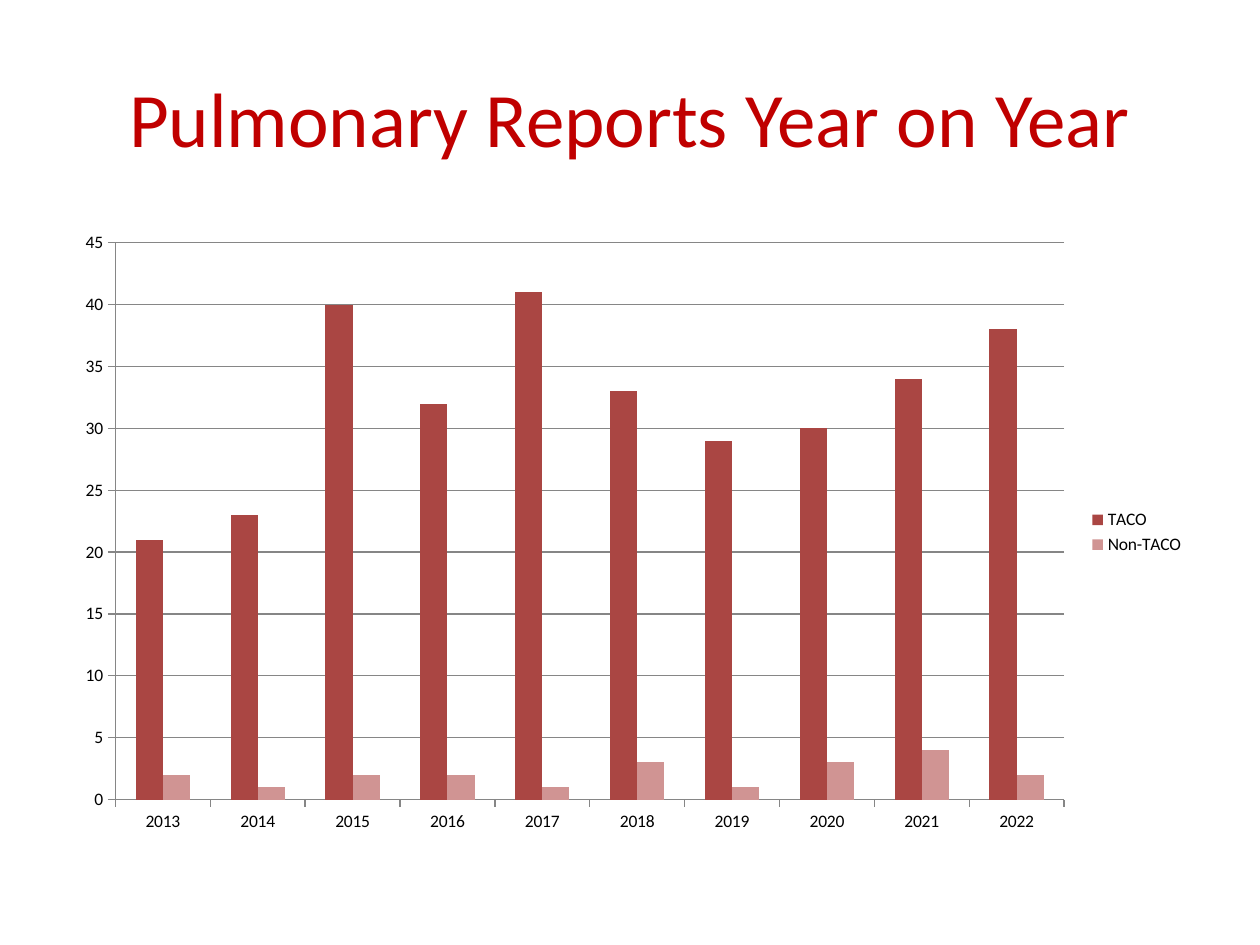
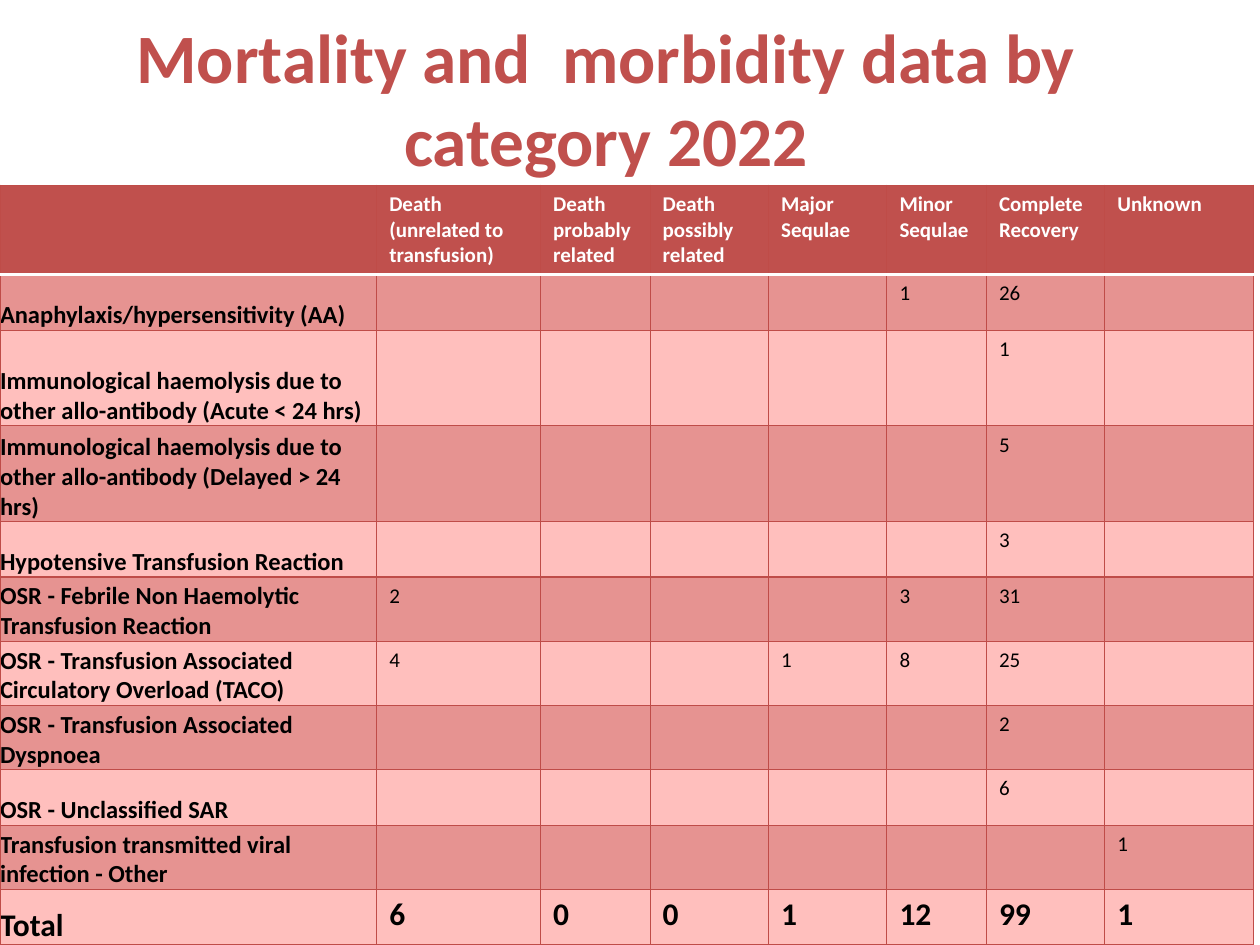
from lxml import etree
from pptx import Presentation
from pptx.chart.data import CategoryChartData
from pptx.dml.color import RGBColor
from pptx.enum.chart import XL_CHART_TYPE as ChartType, XL_LEGEND_POSITION as LegendPos, XL_TICK_MARK as Tick
from pptx.enum.text import MSO_ANCHOR as Anchor, MSO_AUTO_SIZE as AutoSize, PP_ALIGN as Align
from pptx.oxml.ns import qn
from pptx.util import Inches, Pt

FONT = "Calibri"
COLORS = {
    "title": "C00000", "accent": "C0504D", "border": "BF4C48",
    "dark_row": "E69391", "light_row": "FFBFBD",
    "taco": "AA4643", "non_taco": "D09493", "grid": "868686",
    "black": "000000", "white": "FFFFFF",
}

YEARS = [str(year) for year in range(2013, 2023)]
REPORTS = [
    ("TACO", "taco", [21, 23, 40, 32, 41, 33, 29, 30, 34, 38]),
    ("Non-TACO", "non_taco", [2, 1, 2, 2, 1, 3, 1, 3, 4, 2]),
]

# Heading and column width in inches
OUTCOMES = [
    ("", 2.99),
    ("Death (unrelated to transfusion)", 1.3),
    ("Death probably related", 0.87),
    ("Death possibly related", 0.94),
    ("Major Sequlae", 0.94),
    ("Minor Sequlae", 0.79),
    ("Complete Recovery", 0.94),
    ("Unknown", 1.18),
]
HEADER_HEIGHT = 0.71
# Category, row height in inches, cases by outcome column
CATEGORIES = [
    ("Anaphylaxis/hypersensitivity (AA)", 0.44, {5: 1, 6: 26}),
    ("Immunological haemolysis due to other allo-antibody (Acute < 24 hrs)", 0.76, {6: 1}),
    ("Immunological haemolysis due to other allo-antibody (Delayed > 24 hrs)", 0.76, {6: 5}),
    ("Hypotensive Transfusion Reaction", 0.44, {6: 3}),
    ("OSR - Febrile Non Haemolytic Transfusion Reaction", 0.51, {1: 2, 5: 3, 6: 31}),
    ("OSR - Transfusion Associated Circulatory Overload (TACO)", 0.51, {1: 4, 4: 1, 5: 8, 6: 25}),
    ("OSR - Transfusion Associated Dyspnoea", 0.51, {6: 2}),
    ("OSR - Unclassified SAR", 0.44, {6: 6}),
    ("Transfusion transmitted viral infection - Other", 0.51, {7: 1}),
    ("Total", 0.44, {1: 6, 2: 0, 3: 0, 4: 1, 5: 12, 6: 99, 7: 1}),
]


def rgb(name):
    return RGBColor.from_string(COLORS[name])


def write(tf, text, size=12, color="black", bold=False, align=None):
    p = tf.paragraphs[0]
    p.alignment = align
    r = p.add_run()
    r.text = text
    r.font.name = FONT
    r.font.size = Pt(size)
    r.font.bold = bold
    r.font.color.rgb = rgb(color)


def add_titled_slide(prs, text, box, **fmt):
    s = prs.slides.add_slide(prs.slide_layouts[5])
    title = s.shapes.title
    title.left, title.top, title.width, title.height = map(Inches, box)
    tf = title.text_frame
    tf.auto_size = AutoSize.NONE
    tf.vertical_anchor = Anchor.MIDDLE
    write(tf, text, align=Align.CENTER, **fmt)
    return s


def add_reports_chart(s):
    data = CategoryChartData()
    data.categories = YEARS
    for name, _, values in REPORTS:
        data.add_series(name, values)
    box = map(Inches, (0.5, 1.75, 9, 4.95))
    chart = s.shapes.add_chart(ChartType.COLUMN_CLUSTERED, *box, data).chart
    chart.has_title = False
    chart.font.name = FONT
    chart.font.size = Pt(10)
    chart.font.color.rgb = rgb("black")
    chart.has_legend = True
    chart.legend.position = LegendPos.RIGHT
    chart.legend.include_in_layout = False

    plot = chart.plots[0]
    plot.gap_width = 150
    plot.overlap = 0
    plot.vary_by_categories = False
    for series, (_, color, _) in zip(plot.series, REPORTS):
        series.format.fill.solid()
        series.format.fill.fore_color.rgb = rgb(color)

    for axis in (chart.category_axis, chart.value_axis):
        axis.major_tick_mark = Tick.OUTSIDE
        axis.minor_tick_mark = Tick.NONE
        axis.format.line.color.rgb = rgb("grid")
    values = chart.value_axis
    values.minimum_scale, values.maximum_scale, values.major_unit = 0, 45, 5
    values.has_major_gridlines = True
    values.major_gridlines.format.line.color.rgb = rgb("grid")


def set_border(cell, side, color, width):
    line = etree.SubElement(cell._tc.get_or_add_tcPr(), qn(f"a:ln{side}"), w=str(Pt(width)))
    fill = etree.SubElement(line, qn("a:solidFill"))
    etree.SubElement(fill, qn("a:srgbClr"), val=COLORS[color])


def style_cell(cell, row, fill):
    """Draw borders, with a white rule under the header, then fill the cell."""
    for side in "LRTB":
        under_header = (row, side) in ((0, "B"), (1, "T"))
        set_border(cell, side, *(("white", 2) if under_header else ("border", 0.75)))
    cell.fill.solid()
    cell.fill.fore_color.rgb = rgb(fill)


def add_outcome_table(s):
    widths = [width for _, width in OUTCOMES]
    heights = [HEADER_HEIGHT] + [height for _, height, _ in CATEGORIES]
    box = map(Inches, (0, 1.47, sum(widths), sum(heights)))
    table = s.shapes.add_table(len(heights), len(widths), *box).table
    for column, width in zip(table.columns, widths):
        column.width = Inches(width)
    for row, height in zip(table.rows, heights):
        row.height = Inches(height)

    for col, (heading, _) in enumerate(OUTCOMES):
        cell = table.cell(0, col)
        style_cell(cell, 0, "accent")
        if heading:
            write(cell.text_frame, heading, color="white", bold=True)

    for row, (category, _, cases) in enumerate(CATEGORIES, 1):
        is_total = category == "Total"
        for col in range(len(OUTCOMES)):
            cell = table.cell(row, col)
            style_cell(cell, row, "dark_row" if row % 2 else "light_row")
            if col == 0:
                cell.vertical_anchor = Anchor.BOTTOM
                cell.margin_left = cell.margin_right = cell.margin_top = cell.margin_bottom = 0
                write(cell.text_frame, category, size=18 if is_total else 14, bold=True)
            elif col in cases:
                write(cell.text_frame, str(cases[col]), size=18 if is_total else 12, bold=is_total)


def main():
    prs = Presentation()
    prs.slide_width, prs.slide_height = Inches(10), Inches(7.5)
    s = add_titled_slide(prs, "Pulmonary Reports Year on Year", (0.5, 0.3, 9, 1.25),
                         size=44, color="title")
    add_reports_chart(s)
    s = add_titled_slide(prs, "Mortality and  morbidity data by category 2022", (0.12, 0, 9.38, 1.55),
                         size=39.6, color="accent", bold=True)
    add_outcome_table(s)
    prs.save("out.pptx")


if __name__ == "__main__":
    main()
